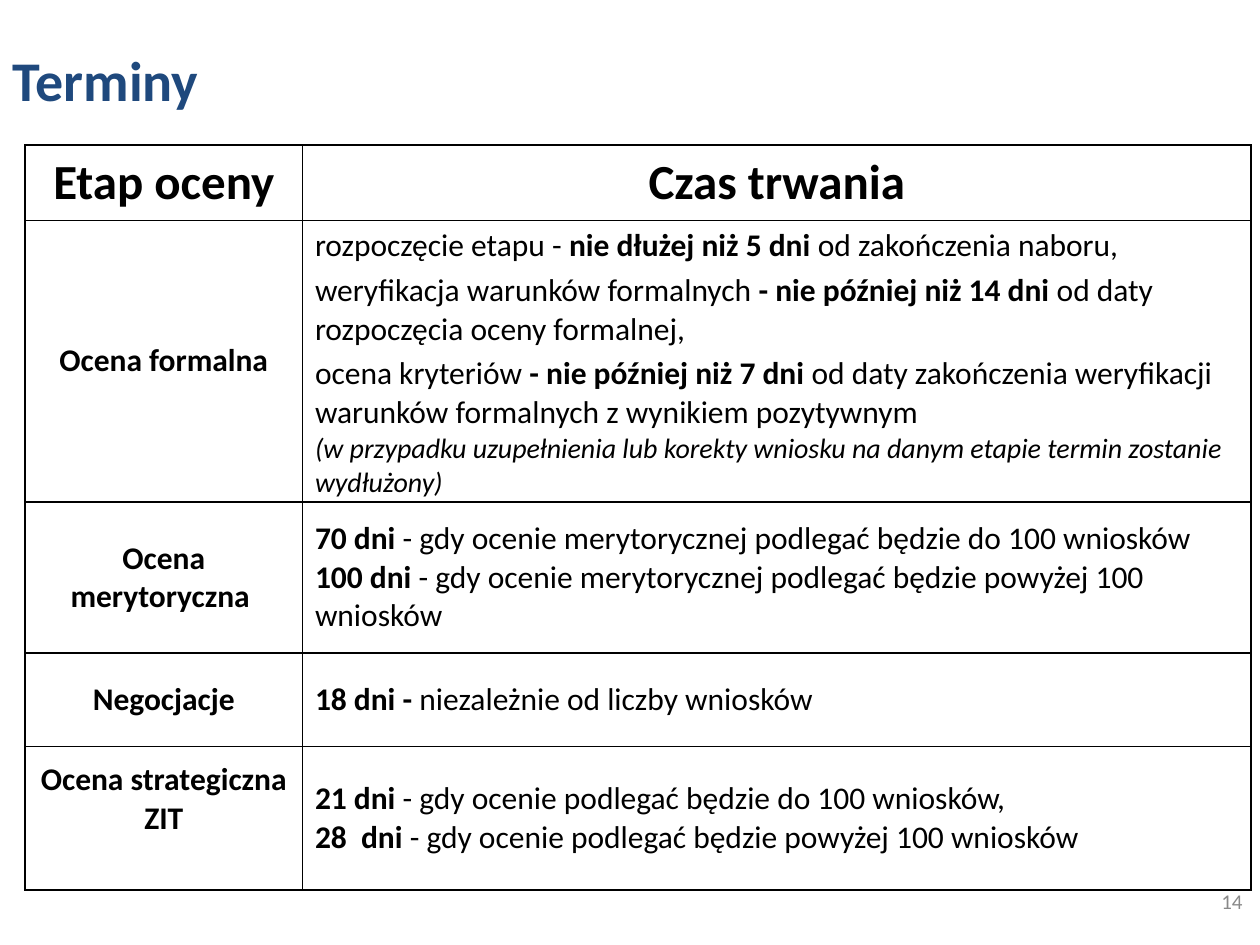
from lxml import etree
from pptx import Presentation
from pptx.dml.color import RGBColor
from pptx.enum.text import MSO_ANCHOR, PP_ALIGN
from pptx.oxml.ns import qn
from pptx.util import Inches, Pt

MIDDLE = MSO_ANCHOR.MIDDLE
LEFT, CENTER, RIGHT = PP_ALIGN.LEFT, PP_ALIGN.CENTER, PP_ALIGN.RIGHT

NAVY = RGBColor(0x1F, 0x49, 0x7D)
GRAY = RGBColor(0x89, 0x89, 0x89)
BLACK = RGBColor(0, 0, 0)
WHITE = RGBColor(255, 255, 255)

FONT_NAME = "Calibri"
TITLE_ONLY = 5
COLUMN_WIDTHS = [2.2, 7.53]
ROW_HEIGHTS = [0.6, 2.23, 1.2, 0.74, 1.14]

HEADER = {"size": Pt(28), "bold": True}
BOLD = {"size": Pt(18), "bold": True}
PLAIN = {"size": Pt(18), "bold": False}
NOTE = {"size": Pt(16), "bold": False, "italic": True}

# Each stage: name, then paragraphs made of (text, format) runs
STAGES = [
    ("Ocena formalna", [
        [("rozpoczęcie etapu - ", PLAIN), ("nie dłużej niż 5 dni ", BOLD),
         ("od zakończenia naboru,", PLAIN)],
        [("weryfikacja warunków formalnych ", PLAIN),
         ("- nie później niż 14 dni ", BOLD),
         ("od daty rozpoczęcia oceny formalnej,", PLAIN)],
        [("ocena kryteriów", PLAIN), (" - nie później niż 7 dni ", BOLD),
         ("od daty zakończenia weryfikacji warunków formalnych "
          "z wynikiem pozytywnym", PLAIN)],
        [("(w przypadku uzupełnienia lub korekty wniosku na danym etapie "
          "termin zostanie wydłużony)", NOTE)],
    ]),
    ("Ocena merytoryczna ", [
        [("70 dni ", BOLD),
         ("- gdy ocenie merytorycznej podlegać będzie do 100 wniosków", PLAIN)],
        [("100 dni ", BOLD),
         ("- gdy ocenie merytorycznej podlegać będzie powyżej 100 wniosków", PLAIN)],
    ]),
    ("Negocjacje", [
        [("18 dni - ", BOLD), ("niezależnie od liczby wniosków", PLAIN)],
    ]),
    ("Ocena strategiczna ZIT", [
        [("21 dni ", BOLD), ("- gdy ocenie podlegać będzie do 100 wniosków,", PLAIN)],
        [("28  dni ", BOLD),
         ("- gdy ocenie podlegać będzie powyżej 100 wniosków", PLAIN)],
    ]),
]


def write_paragraphs(text_frame, paragraphs, alignment=LEFT, color=BLACK):
    for index, runs in enumerate(paragraphs):
        paragraph = text_frame.paragraphs[0] if index == 0 else text_frame.add_paragraph()
        paragraph.alignment = alignment
        for text, formats in runs:
            run = paragraph.add_run()
            run.text = text
            run.font.name = FONT_NAME
            run.font.color.rgb = color
            for name, value in formats.items():
                setattr(run.font, name, value)


def add_borders(cell):
    properties = cell._tc.get_or_add_tcPr()
    for position, side in enumerate(("lnL", "lnR", "lnT", "lnB")):
        line = etree.Element(qn(f"a:{side}"), w=str(Pt(1)))
        fill = etree.SubElement(line, qn("a:solidFill"))
        etree.SubElement(fill, qn("a:srgbClr"), val=str(BLACK))
        properties.insert(position, line)


def fill_cell(cell, paragraphs, alignment):
    cell.fill.solid()
    cell.fill.fore_color.rgb = WHITE
    cell.vertical_anchor = MIDDLE
    add_borders(cell)
    write_paragraphs(cell.text_frame, paragraphs, alignment)


def add_title(slide, left, top, width, height):
    title = slide.shapes.title
    title.left, title.top, title.width, title.height = left, top, width, height
    title.text_frame.vertical_anchor = MIDDLE
    write_paragraphs(title.text_frame,
                     [[("Terminy", {"size": Pt(32), "bold": True})]], LEFT, NAVY)


def add_page_number(slide, left, top, width, height):
    text_frame = slide.shapes.add_textbox(left, top, width, height).text_frame
    text_frame.word_wrap = True
    text_frame.vertical_anchor = MIDDLE
    write_paragraphs(text_frame, [[("14", {"size": Pt(12)})]], RIGHT, GRAY)


def add_deadline_table(slide, left, top, width, height):
    table = slide.shapes.add_table(len(ROW_HEIGHTS), len(COLUMN_WIDTHS),
                                   left, top, width, height).table
    table.horz_banding = False
    for column, column_width in zip(table.columns, COLUMN_WIDTHS):
        column.width = Inches(column_width)
    for row, row_height in zip(table.rows, ROW_HEIGHTS):
        row.height = Inches(row_height)

    # Header row
    for column, heading in enumerate(("Etap oceny", "Czas trwania")):
        fill_cell(table.cell(0, column), [[(heading, HEADER)]], CENTER)

    # Stage rows
    for row, (stage, deadlines) in enumerate(STAGES, start=1):
        fill_cell(table.cell(row, 0), [[(stage, BOLD)]], CENTER)
        fill_cell(table.cell(row, 1), deadlines, LEFT)

    # Gaps between the formal steps; the last stage name sits above centre
    for paragraph in table.cell(1, 1).text_frame.paragraphs[1:3]:
        paragraph.space_before = Pt(3.6)
    table.cell(len(STAGES), 0).margin_bottom = Inches(0.35)


def main():
    presentation = Presentation()
    presentation.slide_width = Inches(10)
    presentation.slide_height = Inches(7.5)
    slide = presentation.slides.add_slide(presentation.slide_layouts[TITLE_ONLY])
    add_title(slide, Inches(0), Inches(0), Inches(9), Inches(1.25))
    add_page_number(slide, Inches(7.63), Inches(6.95), Inches(2.33), Inches(0.4))
    add_deadline_table(slide, Inches(0.2), Inches(1.15),
                       Inches(sum(COLUMN_WIDTHS)), Inches(sum(ROW_HEIGHTS)))
    presentation.save("out.pptx")


if __name__ == "__main__":
    main()
